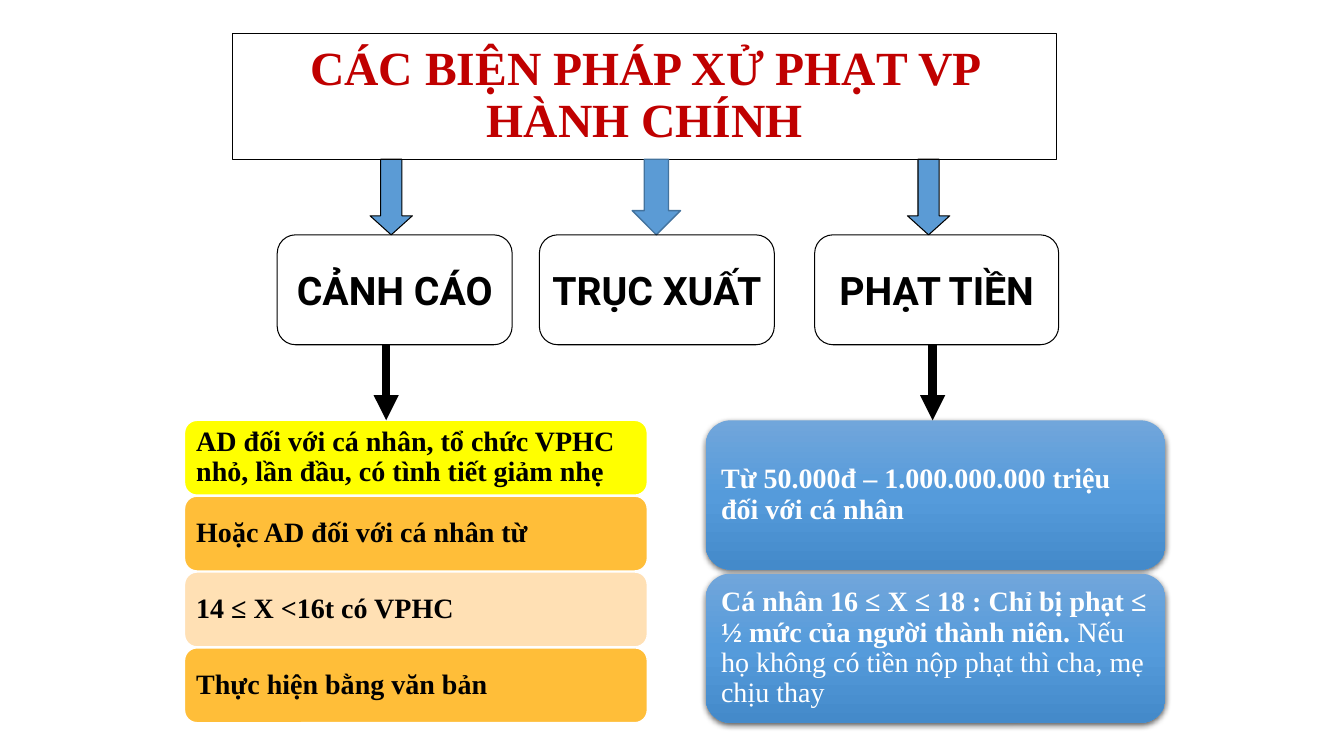
from copy import deepcopy

from pptx import Presentation
from pptx import util as u
from pptx.dml.color import RGBColor
from pptx.enum import shapes, text
from pptx.oxml import parse_xml
from pptx.oxml.ns import nsdecls, qn

COLOURS = {
    "black": "000000", "white": "FFFFFF", "red": "C00000", "yellow": "FFFF00",
    "amber": "FFBE39", "cream": "FFE0B4", "arrow": "5B9BD5", "arrow_edge": "43739E",
    "blue_top": "71A6DB", "blue_middle": "559BDB", "blue_bottom": "448ACA",
}
SERIF, SANS = "Times New Roman", "Roboto"

# Rows of the page: each tier starts where the arrows above it end
TITLE_TOP, TITLE_BOTTOM = 0.33, 1.58
MEASURE_TOP, MEASURE_BOTTOM = 2.33, 3.42
DETAIL_TOP, DETAIL_BOTTOM = 4.17, 7.17

# Measures: name, left, width
MEASURES = [("CẢNH CÁO", 2.75, 2.33), ("TRỤC XUẤT", 5.35, 2.33), ("PHẠT TIỀN", 8.08, 2.42)]
# Block arrows: left, width, head share, edge colour, edge width
BLOCK_ARROWS = [
    (3.67, 0.42, 0.45, "black", 0.75),
    (6.27, 0.48, 0.5, "arrow_edge", 1),
    (9, 0.42, 0.45, "black", 0.75),
]
LINE_ARROWS = [3.83, 9.25]

WARNING_ROWS = [
    ("yellow", [("AD đối với cá nhân, tổ chức VPHC nhỏ, lần đầu, có tình tiết giảm nhẹ", True)]),
    ("amber", [("Hoặc AD đối với cá nhân từ", True)]),
    ("cream", [("14 ≤ X <16t có VPHC", True)]),
    ("amber", [("Thực hiện bằng văn bản", True)]),
]
FINE_ROWS = [
    ("gradient", [("Từ 50.000đ – 1.000.000.000 triệu đối với cá nhân", True)]),
    ("gradient", [("Cá nhân 16 ≤ X ≤ 18 : Chỉ bị phạt ≤ ½ mức của người thành niên. ", True),
                  ("Nếu họ không có tiền nộp phạt thì cha, mẹ chịu thay", False)]),
]


def colour(name):
    return RGBColor.from_string(COLOURS[name])


def set_line(shape, name, width):
    shape.line.color.rgb = colour(name)
    shape.line.width = u.Pt(width)


def add_box(page, kind, left, top, width, height):
    box = page.shapes.add_shape(kind, *map(u.Inches, (left, top, width, height)))
    box.shadow.inherit = False
    return box


def write(box, spans, size, font, ink, align, spacing=1.0):
    frame = box.text_frame
    frame.vertical_anchor = text.MSO_ANCHOR.MIDDLE
    para = frame.paragraphs[0]
    para.alignment = align
    para.line_spacing = spacing
    for words, bold in spans:
        span = para.add_run()
        span.text = words
        span.font.size = u.Pt(size)
        span.font.name = font
        span.font.bold = bold
        span.font.color.rgb = colour(ink)


def fill_gradient(box):
    box.fill.gradient()
    box.fill.gradient_angle = 270
    stop_list = box.element.spPr.find(".//" + qn("a:gsLst"))
    stop_list.insert(1, deepcopy(stop_list[0]))
    names = ("blue_top", "blue_middle", "blue_bottom")
    for stop, name, position in zip(box.fill.gradient_stops, names, (0, 0.5, 1)):
        stop.color.rgb = colour(name)
        stop.position = position


def add_shadow(box):
    box.element.spPr.find(qn("a:effectLst")).append(parse_xml(
        f'<a:outerShdw {nsdecls("a")} blurRad="{u.Pt(4.5)}" dist="{u.Pt(1.5)}" '
        f'dir="5400000" algn="ctr" rotWithShape="0"><a:srgbClr val="{COLOURS["black"]}">'
        '<a:alpha val="63000"/></a:srgbClr></a:outerShdw>'))


def add_title(page, left, top, width, height):
    title = page.shapes.title
    title.left, title.top, title.width, title.height = map(u.Inches, (left, top, width, height))
    title.text_frame.word_wrap = True
    title.text_frame.auto_size = text.MSO_AUTO_SIZE.NONE
    set_line(title, "black", 0.75)
    write(title, [("CÁC BIỆN PHÁP XỬ PHẠT VP HÀNH CHÍNH", True)],
          34, SERIF, "red", text.PP_ALIGN.CENTER, 0.9)


def add_block_arrows(page, top, height):
    for left, width, head, edge, weight in BLOCK_ARROWS:
        arrow = add_box(page, shapes.MSO_SHAPE.DOWN_ARROW, left, top, width, height)
        arrow.adjustments[1] = head
        arrow.fill.solid()
        arrow.fill.fore_color.rgb = colour("arrow")
        set_line(arrow, edge, weight)


def add_measures(page, top, height):
    for name, left, width in MEASURES:
        box = add_box(page, shapes.MSO_SHAPE.ROUNDED_RECTANGLE, left, top, width, height)
        box.fill.background()
        set_line(box, "black", 0.75)
        box.text_frame.word_wrap = False
        write(box, [(name, True)], 28, SANS, "black", text.PP_ALIGN.CENTER)


def add_line_arrows(page, top, bottom):
    for x in LINE_ARROWS:
        ends = map(u.Inches, (x, top, x, bottom))
        arrow = page.shapes.add_connector(shapes.MSO_CONNECTOR.STRAIGHT, *ends)
        set_line(arrow, "black", 6)
        arrow.line._get_or_add_ln().append(
            parse_xml(f'<a:tailEnd {nsdecls("a")} type="triangle"/>'))
        arrow.element.spPr.append(parse_xml(f'<a:effectLst {nsdecls("a")}/>'))


def add_details(page, rows, left, top, width, height, gap):
    row_height = (height - gap * (len(rows) - 1)) / len(rows)
    for index, (fill, spans) in enumerate(rows):
        box = add_box(page, shapes.MSO_SHAPE.ROUNDED_RECTANGLE,
                      left, top + index * (row_height + gap), width, row_height)
        if fill == "gradient":
            fill_gradient(box)
            add_shadow(box)
            box.line.fill.background()
        else:
            box.fill.solid()
            box.fill.fore_color.rgb = colour(fill)
            set_line(box, "white", 1)
        frame = box.text_frame
        frame.word_wrap = True
        frame.margin_left = frame.margin_right = u.Inches(0.08)
        frame.margin_top = frame.margin_bottom = u.Inches(0.08)
        ink = "white" if fill == "gradient" else "black"
        write(box, spans, 20, SERIF, ink, text.PP_ALIGN.LEFT, 0.9)


def main():
    deck = Presentation()
    deck.slide_width, deck.slide_height = u.Inches(13.33), u.Inches(7.5)
    page = deck.slides.add_slide(deck.slide_layouts.get_by_name("Title Only"))

    # Title and the three measures under it
    add_title(page, 2.31, TITLE_TOP, 8.17, TITLE_BOTTOM - TITLE_TOP)
    add_block_arrows(page, TITLE_BOTTOM, MEASURE_TOP - TITLE_BOTTOM)
    add_measures(page, MEASURE_TOP, MEASURE_BOTTOM - MEASURE_TOP)

    # Details of the warning and of the fine
    detail_height = DETAIL_BOTTOM - DETAIL_TOP
    add_details(page, WARNING_ROWS, 1.83, DETAIL_TOP, 4.59, detail_height, 0.01)
    add_details(page, FINE_ROWS, 7, DETAIL_TOP, 4.56, detail_height, 0.04)
    add_line_arrows(page, MEASURE_BOTTOM, DETAIL_TOP)

    deck.save("out.pptx")


if __name__ == "__main__":
    main()
